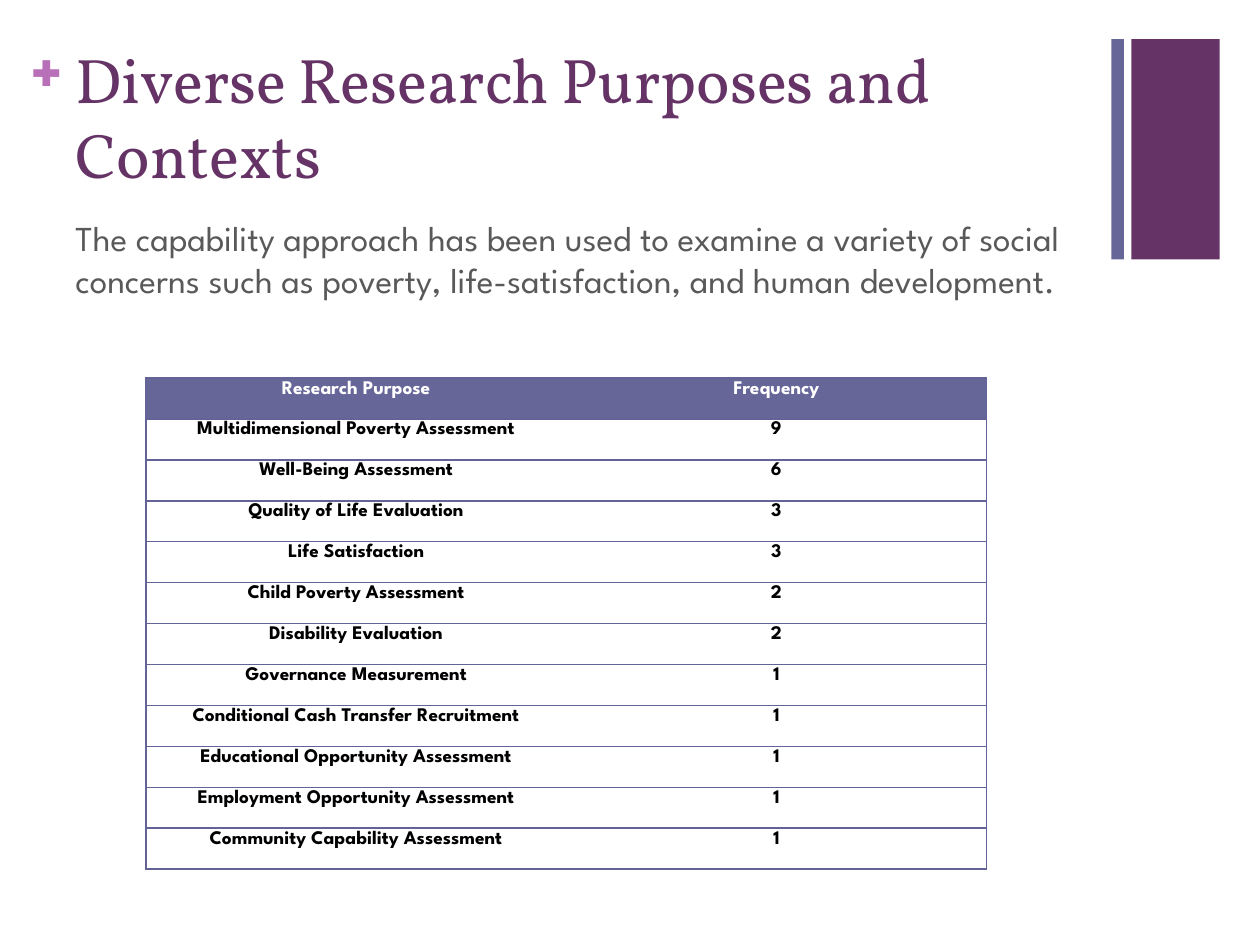
"""Build the slide on research purposes and contexts of the capability approach."""
from dataclasses import dataclass

import lxml.etree
import pptx
import pptx.dml.color
import pptx.enum.shapes
import pptx.enum.text
import pptx.oxml.ns
import pptx.util

Inches = pptx.util.Inches
RGBColor = pptx.dml.color.RGBColor
Align = pptx.enum.text.PP_ALIGN
Anchor = pptx.enum.text.MSO_ANCHOR

PURPLE = RGBColor(0x66, 0x33, 0x66)
SLATE = RGBColor(0x66, 0x66, 0x99)
ORCHID = RGBColor(0xB8, 0x70, 0xB8)
GRAY = RGBColor(0x59, 0x59, 0x59)
BORDER = RGBColor(0x63, 0x63, 0x97)
WHITE = RGBColor(0xFF, 0xFF, 0xFF)
BLACK = RGBColor(0x00, 0x00, 0x00)
SERIF = "Vollkorn"
SANS = "League Spartan"


@dataclass(frozen=True)
class Area:
    left: float
    top: float
    width: float
    height: float

    def lengths(self) -> tuple:
        return tuple(map(Inches, (self.left, self.top, self.width, self.height)))


@dataclass(frozen=True)
class Style:
    font: str
    size: float
    color: RGBColor
    bold: bool = False


BARS = (
    (Area(8.98, 0.31, 0.7, 1.75), PURPLE),
    (Area(8.82, 0.31, 0.1, 1.75), SLATE),
)
TABLE_AREA = Area(1.16, 3, 6.67, 3.9)
ROWS = (
    ("Research Purpose", "Frequency"),
    ("Multidimensional Poverty Assessment", "9"),
    ("Well-Being Assessment", "6"),
    ("Quality of Life Evaluation", "3"),
    ("Life Satisfaction", "3"),
    ("Child Poverty Assessment", "2"),
    ("Disability Evaluation", "2"),
    ("Governance Measurement", "1"),
    ("Conditional Cash Transfer Recruitment", "1"),
    ("Educational Opportunity Assessment", "1"),
    ("Employment Opportunity Assessment", "1"),
    ("Community Capability Assessment", "1"),
)


def write(frame, text: str, style: Style):
    frame.text = text
    para = frame.paragraphs[0]
    font = para.runs[0].font
    font.name, font.size, font.bold = style.font, pptx.util.Pt(style.size), style.bold
    font.color.rgb = style.color
    return para


def add_bar(page, area: Area, color: RGBColor) -> None:
    bar = page.shapes.add_shape(pptx.enum.shapes.MSO_SHAPE.RECTANGLE, *area.lengths())
    bar.shadow.inherit = False
    bar.fill.solid()
    bar.fill.fore_color.rgb = color
    bar.line.fill.background()


def add_text(page, area: Area, text: str, style: Style, inset: tuple = (0.1, 0.05)):
    frame = page.shapes.add_textbox(*area.lengths()).text_frame
    frame.word_wrap = True
    frame.margin_left = frame.margin_right = Inches(inset[0])
    frame.margin_top = frame.margin_bottom = Inches(inset[1])
    return write(frame, text, style)


def set_borders(cell, visible: str) -> None:
    properties = cell._tc.get_or_add_tcPr()
    qn = pptx.oxml.ns.qn
    for position, side in enumerate("LRTB"):
        line = lxml.etree.Element(qn(f"a:ln{side}"), w=str(pptx.util.Pt(1)))
        if side in visible:
            fill = lxml.etree.SubElement(line, qn("a:solidFill"))
            lxml.etree.SubElement(fill, qn("a:srgbClr"), val=str(BORDER))
        else:
            lxml.etree.SubElement(line, qn("a:noFill"))
        properties.insert(position, line)


def add_frequency_table(page, area: Area, rows: tuple) -> None:
    table = page.shapes.add_table(len(rows), len(rows[0]), *area.lengths()).table
    table.horz_banding = False
    for row, values in enumerate(rows):
        table.rows[row].height = Inches(area.height / len(rows))
        for column, value in enumerate(values):
            cell = table.cell(row, column)
            cell.margin_left = cell.margin_right = Inches(0.07)
            cell.margin_top = cell.margin_bottom = 0
            color = BLACK if row else WHITE
            para = write(cell.text_frame, value, Style(SANS, 11, color, True))
            para.alignment = Align.CENTER
            para.line_spacing = 1.15
            if row:
                cell.fill.background()
            else:
                cell.fill.solid()
                cell.fill.fore_color.rgb = SLATE
            set_borders(cell, "TB" + "LR"[column])


def main() -> None:
    deck = pptx.Presentation()
    deck.slide_width, deck.slide_height = Inches(10), Inches(7.5)
    page = deck.slides.add_slide(deck.slide_layouts[5])
    for area, color in BARS:
        add_bar(page, area, color)
    add_text(page, Area(0.24, 0.25, 0.29, 0.61), "+", Style(SANS, 36, ORCHID, True), (0, 0))

    title = page.shapes.title
    title.left, title.top, title.width, title.height = Area(0.5, 0.17, 8.18, 1.5).lengths()
    heading = write(title.text_frame, "Diverse Research Purposes and Contexts", Style(SERIF, 36, PURPLE))
    heading.alignment = Align.LEFT
    title.text_frame.vertical_anchor = Anchor.MIDDLE

    summary = add_text(
        page,
        Area(0.5, 1.67, 8.26, 4.53),
        "The capability approach has been used to examine a variety of social concerns "
        "such as poverty, life-satisfaction, and human development.",
        Style(SANS, 20, GRAY),
    )
    summary.space_before = pptx.util.Pt(20)
    add_frequency_table(page, TABLE_AREA, ROWS)
    deck.save("out.pptx")


if __name__ == "__main__":
    main()
